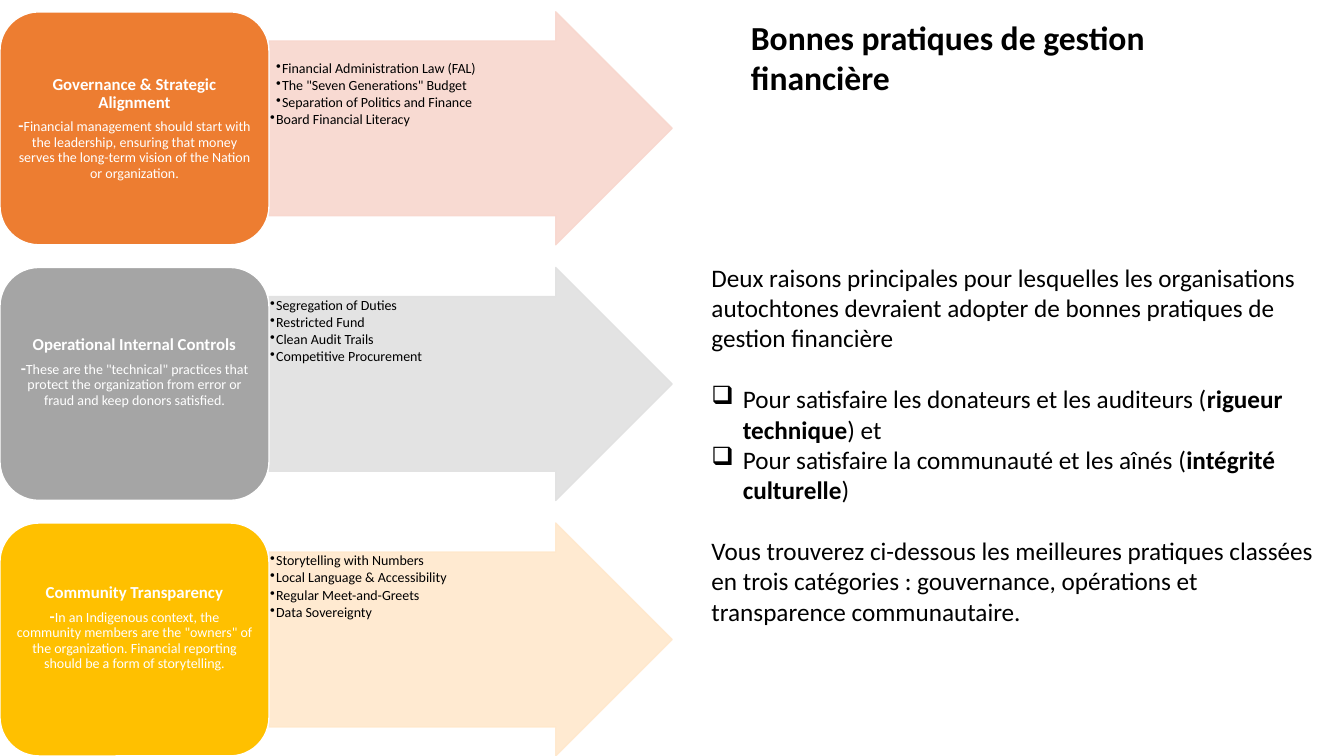
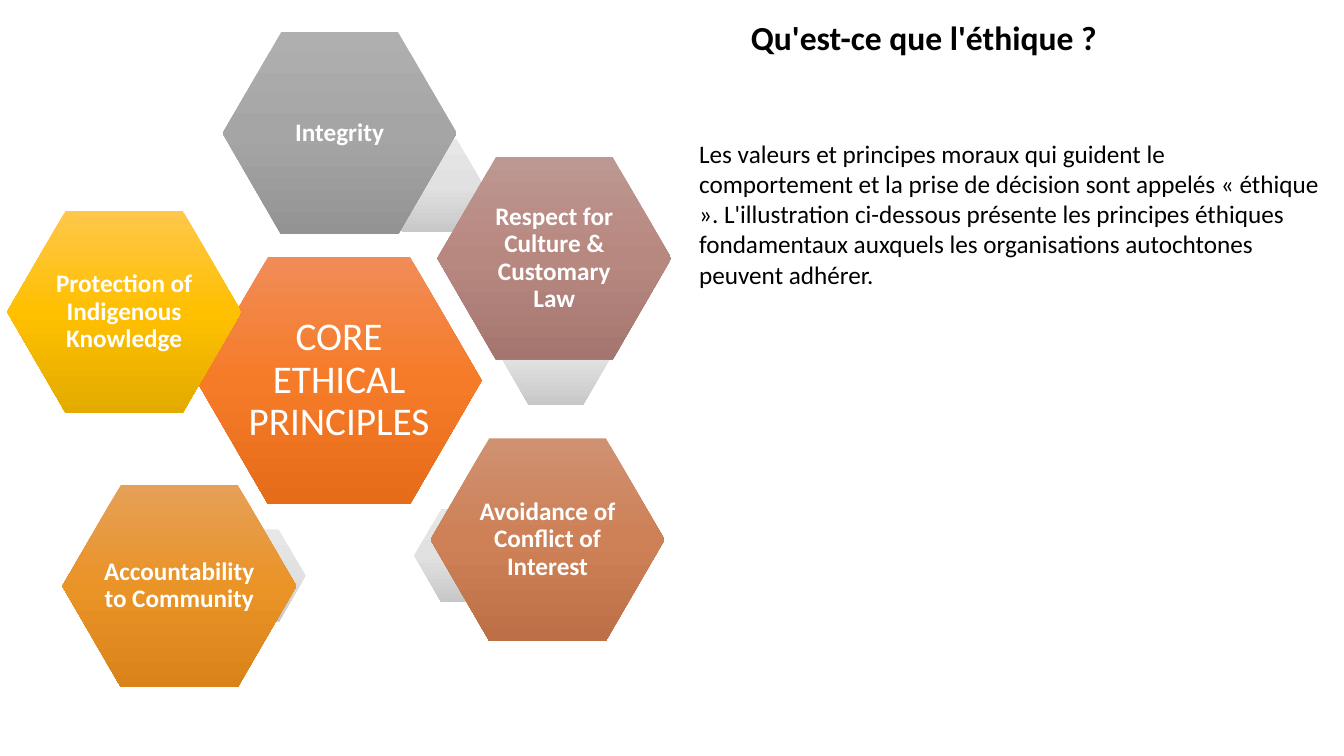
import copy

import pptx
import pptx.dml.color
import pptx.enum.shapes
import pptx.enum.text
import pptx.oxml
import pptx.oxml.ns
import pptx.util

Cm = pptx.util.Cm
Pt = pptx.util.Pt
RGBColor = pptx.dml.color.RGBColor
MSO_SHAPE = pptx.enum.shapes.MSO_SHAPE
MSO_ANCHOR = pptx.enum.text.MSO_ANCHOR
PP_ALIGN = pptx.enum.text.PP_ALIGN
qn = pptx.oxml.ns.qn

FONT = "Calibri"
BLACK = RGBColor(0x00, 0x00, 0x00)
WHITE = RGBColor(0xFF, 0xFF, 0xFF)
ORANGE = RGBColor(0xED, 0x7D, 0x31)
GREY = RGBColor(0xA5, 0xA5, 0xA5)
GOLD = RGBColor(0xFF, 0xC0, 0x00)
PALE_ORANGE = RGBColor(0xF8, 0xD7, 0xCE)
PALE_GREY = RGBColor(0xE1, 0xE1, 0xE1)
PALE_GOLD = RGBColor(0xFF, 0xE8, 0xCC)
CORE_GRADIENT = (RGBColor(0xF1, 0x8C, 0x57), RGBColor(0xF6, 0x7B, 0x28), RGBColor(0xE5, 0x6C, 0x19))
ACCENT_GRADIENT = (RGBColor(0xE7, 0xE7, 0xE7), PALE_GREY, RGBColor(0xC8, 0xC8, 0xC8))
GREY_GRADIENT = (RGBColor(0xAF, 0xAF, 0xAF), GREY, RGBColor(0x93, 0x93, 0x93))
ROSE_GRADIENT = (RGBColor(0xBD, 0x97, 0x91), RGBColor(0xB7, 0x88, 0x80), RGBColor(0xA5, 0x76, 0x6F))
COPPER_GRADIENT = (RGBColor(0xCF, 0x91, 0x72), RGBColor(0xCE, 0x80, 0x56), RGBColor(0xBD, 0x70, 0x47))
AMBER_GRADIENT = (RGBColor(0xE6, 0xA0, 0x56), RGBColor(0xEA, 0x93, 0x27), RGBColor(0xDA, 0x83, 0x19))
GOLD_GRADIENT = (RGBColor(0xFF, 0xC7, 0x4B), GOLD, RGBColor(0xE3, 0xAB, 0x00))

ROW_TOP, ROW_PITCH, ROW_HEIGHT = 0.3, 6.44, 5.87
CARD_WIDTH, ARROW_WIDTH = 6.78, 10.16
PETAL_SIZE = (5.9, 5.1)
ACCENT_SIZE = (2.72, 2.34)

PRACTICES = [
    (ORANGE, PALE_ORANGE, "Governance & Strategic Alignment",
     "Financial management should start with the leadership, ensuring that money serves "
     "the long-term vision of the Nation or organization.",
     [("Financial Administration Law (FAL)", 0.3), ('The "Seven Generations" Budget', 0.3),
      ("Separation of Politics and Finance", 0.3), ("Board Financial Literacy", 0.15)],
     0.5, 0.08),
    (GREY, PALE_GREY, "Operational Internal Controls",
     'These are the "technical" practices that protect the organization from error or '
     "fraud and keep donors satisfied.",
     [("Segregation of Duties", 0.15), ("Restricted Fund", 0.15),
      ("Clean Audit Trails", 0.15), ("Competitive Procurement", 0.15)],
     0.03, 0.68),
    (GOLD, PALE_GOLD, "Community Transparency",
     'In an Indigenous context, the community members are the "owners" of the organization. '
     "Financial reporting should be a form of storytelling.",
     [("Storytelling with Numbers", 0.15), ("Local Language & Accessibility", 0.15),
      ("Regular Meet-and-Greets", 0.15), ("Data Sovereignty", 0.15)],
     0.03, 0.68),
]

PETALS = [
    ("Integrity", 5.61, 0.81, GREY_GRADIENT, (9.47, 3.51)),
    ("Respect for Culture & Customary Law", 11.02, 3.96, ROSE_GRADIENT, (12.65, 7.87)),
    ("Avoidance of Conflict of Interest", 10.85, 11.05, COPPER_GRADIENT, (10.44, 12.83)),
    ("Accountability to Community", 1.57, 12.22, AMBER_GRADIENT, (4.98, 13.34)),
    ("Protection of Indigenous Knowledge", 0.18, 5.31, GOLD_GRADIENT, None),
]


def set_insets(tf, left, top, right, bottom):
    tf.margin_left, tf.margin_top = Cm(left), Cm(top)
    tf.margin_right, tf.margin_bottom = Cm(right), Cm(bottom)


def add_run(p, text, size, color, bold=False):
    r = p.add_run()
    r.text = text
    r.font.name = FONT
    r.font.size = Pt(size)
    r.font.bold = bold
    r.font.color.rgb = color


def next_paragraph(tf):
    return tf.add_paragraph() if tf.paragraphs[0].runs else tf.paragraphs[0]


def add_bullet(p, char, margin, hanging):
    pPr = p._p.get_or_add_pPr()
    pPr.set("marL", str(Cm(margin)))
    pPr.set("indent", str(-Cm(hanging)))
    bullet = pptx.oxml.parse_xml(f'<a:buChar {pptx.oxml.ns.nsdecls("a")} char="{char}"/>')
    pPr.append(bullet)


def add_textbox(slide, left, top, width, height):
    tf = slide.shapes.add_textbox(Cm(left), Cm(top), Cm(width), Cm(height)).text_frame
    tf.word_wrap = True
    return tf


def add_shape(slide, kind, left, top, width, height):
    sp = slide.shapes.add_shape(kind, Cm(left), Cm(top), Cm(width), Cm(height))
    sp.shadow.inherit = False
    return sp


def set_solid(sp, fill, line):
    sp.fill.solid()
    sp.fill.fore_color.rgb = fill
    sp.line.color.rgb = line
    sp.line.width = Pt(1)


def set_alpha(sp, percent):
    for clr in sp._element.spPr.iter(qn("a:srgbClr")):
        clr.append(pptx.oxml.parse_xml(
            f'<a:alpha {pptx.oxml.ns.nsdecls("a")} val="{percent * 1000}"/>'))


def set_gradient(sp, colors):
    sp.fill.gradient()
    sp.fill.gradient_angle = 270
    stops = sp._element.spPr.find(".//" + qn("a:gsLst"))
    stops.insert(1, copy.deepcopy(stops[0]))
    for i, (stop, color) in enumerate(zip(sp.fill.gradient_stops, colors)):
        stop.position = i / 2
        stop.color.rgb = color


def add_titled_slide(prs, title, height):
    slide = prs.slides.add_slide(prs.slide_layouts[5])
    sp = slide.shapes.title
    sp.left, sp.top, sp.width, sp.height = Cm(18.67), Cm(0.3), Cm(12.04), Cm(height)
    tf = sp.text_frame
    tf.word_wrap = True
    tf.auto_size = pptx.enum.text.MSO_AUTO_SIZE.NONE
    tf.vertical_anchor = MSO_ANCHOR.TOP
    p = tf.paragraphs[0]
    p.alignment = PP_ALIGN.LEFT
    add_run(p, title, 24, BLACK, True)
    return slide


def add_body(slide, left, top, height, paragraphs):
    tf = add_textbox(slide, left, top, 16.18, height)
    for runs, bulleted, gap in paragraphs:
        p = next_paragraph(tf)
        if bulleted:
            add_bullet(p, "❑", 0.79, 0.79)
        if gap:
            p.space_before = Pt(gap)
        for text, bold in runs:
            add_run(p, text, 18, BLACK, bold)


def add_practice_row(slide, top, practice):
    color, pale, heading, summary, points, points_inset, card_inset = practice
    arrow = add_shape(slide, MSO_SHAPE.RIGHT_ARROW, CARD_WIDTH, top, ARROW_WIDTH, ROW_HEIGHT)
    arrow.adjustments[0], arrow.adjustments[1] = 0.75, 0.5
    set_solid(arrow, pale, pale)
    set_alpha(arrow, 90)

    tf = add_textbox(slide, CARD_WIDTH, top + 0.74, 7.97, 4.39)
    set_insets(tf, 0.03, points_inset, 0.03, 0.03)
    for text, margin in points:
        p = next_paragraph(tf)
        add_bullet(p, "•", margin, 0.15)
        p.line_spacing = 0.9
        p.space_after = Pt(1.5)
        add_run(p, text, 10, BLACK)

    card = add_shape(slide, MSO_SHAPE.ROUNDED_RECTANGLE, 0, top, CARD_WIDTH, ROW_HEIGHT)
    set_solid(card, color, WHITE)
    tf = card.text_frame
    tf.word_wrap = True
    tf.vertical_anchor = MSO_ANCHOR.MIDDLE
    set_insets(tf, 0.13, 0.08, 0.13, card_inset)
    for runs in ([(heading, 12, True)], [("-", 12, True), (summary, 10, False)]):
        p = next_paragraph(tf)
        p.alignment = PP_ALIGN.CENTER
        p.line_spacing = 0.9
        p.space_after = Pt(4)
        for text, size, bold in runs:
            add_run(p, text, size, WHITE, bold)


def add_hexagon(slide, left, top, size, colors, text=None, font_size=18, bold=True):
    sp = add_shape(slide, MSO_SHAPE.HEXAGON, left, top, *size)
    sp.adjustments[0] = 0.29
    set_gradient(sp, colors)
    sp.line.fill.background()
    if text:
        tf = sp.text_frame
        tf.word_wrap = True
        tf.vertical_anchor = MSO_ANCHOR.MIDDLE
        set_insets(tf, 0, 0, 0, 0)
        p = tf.paragraphs[0]
        p.alignment = PP_ALIGN.CENTER
        p.line_spacing = 0.9
        add_run(p, text, font_size, WHITE, bold)


def build_practices(prs):
    slide = add_titled_slide(prs, "Bonnes pratiques de gestion financière", 2.31)
    add_body(slide, 17.68, 6.48, 9.4, [
        ([("Deux raisons principales pour lesquelles les organisations autochtones devraient "
           "adopter de bonnes pratiques de gestion financière", False)], False, 0),
        ([("Pour satisfaire les donateurs et les auditeurs (", False),
          ("rigueur technique", True), (") et", False)], True, 22),
        ([("Pour satisfaire la communauté et les aînés (", False),
          ("intégrité culturelle", True), (")", False)], True, 0),
        ([("Vous trouverez ci-dessous les meilleures pratiques classées en trois catégories : "
           "gouvernance, opérations et transparence communautaire.", False)], False, 22),
    ])
    for i, practice in enumerate(PRACTICES):
        add_practice_row(slide, ROW_TOP + i * ROW_PITCH, practice)


def build_ethics(prs):
    slide = add_titled_slide(prs, "Qu'est-ce que l'éthique ?", 1.27)
    add_body(slide, 17.37, 3.35, 4.2, [
        ([("Les valeurs et principes moraux qui guident le comportement et la prise de décision "
           "sont appelés « éthique ». L'illustration ci-dessous présente les principes éthiques "
           "fondamentaux auxquels les organisations autochtones peuvent adhérer.", False)],
         False, 0),
    ])
    add_hexagon(slide, 4.95, 6.48, (7.19, 6.22), CORE_GRADIENT,
                "CORE ETHICAL PRINCIPLES", 28, False)
    for text, left, top, colors, accent in PETALS:
        if accent:
            add_hexagon(slide, *accent, ACCENT_SIZE, ACCENT_GRADIENT)
        add_hexagon(slide, left, top, PETAL_SIZE, colors, text)


def main():
    prs = pptx.Presentation()
    prs.slide_width, prs.slide_height = Cm(33.87), Cm(19.05)
    build_practices(prs)
    build_ethics(prs)
    prs.save("out.pptx")


if __name__ == "__main__":
    main()
